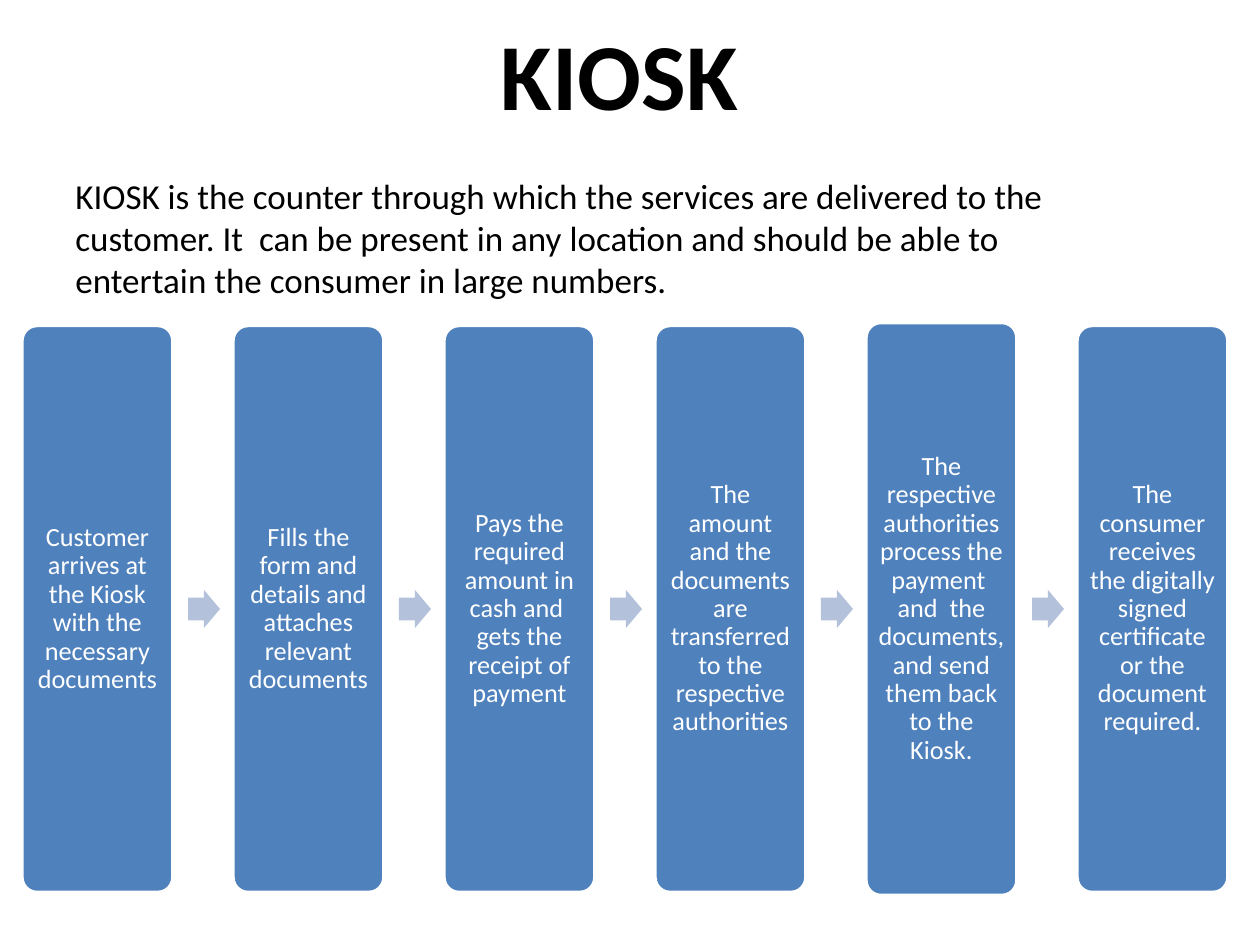
"""Build the KIOSK slide: a title, an introduction and a six-step process."""
from pptx import Presentation
from pptx.dml.color import RGBColor
from pptx.enum.shapes import MSO_SHAPE as SHAPE
from pptx.enum.text import MSO_ANCHOR as ANCHOR, MSO_AUTO_SIZE as AUTO, PP_ALIGN as ALIGN
from pptx.util import Pt

TITLE = "KIOSK"
INTRO = ("KIOSK is the counter through which the services are delivered to the customer. "
         "It  can be present in any location and should be able to entertain the consumer "
         "in large numbers.")
STEPS = [
    "Customer arrives at the Kiosk with the necessary documents",
    "Fills the form and details and attaches relevant documents",
    "Pays the required amount in cash and  gets the receipt of payment",
    "The amount and the documents are transferred to the respective authorities",
    "The respective authorities process the payment  and  the documents, "
    "and send them back to the Kiosk.",
    "The consumer receives the digitally signed certificate or the document required.",
]
TALL_STEP = 4

BLACK = RGBColor(0x00, 0x00, 0x00)
WHITE = RGBColor(0xFF, 0xFF, 0xFF)
BLUE = RGBColor(0x4F, 0x81, 0xBD)
PALE_BLUE = RGBColor(0xB3, 0xC1, 0xDB)
FONT = "Calibri"

SCALE = 914400 / 126
LEFT, PITCH, MIDDLE = 22, 211, 609
BOX_W, BOX_H, TALL_H = 151, 567, 573
ARROW_DX, ARROW_W, ARROW_H = 166, 32, 38
MARGIN = 7


def px(n):
    return round(n * SCALE)


def box(x, y, w, h):
    return px(x), px(y), px(w), px(h)


def write(tf, text, size, color, align, anchor, bold=False):
    tf.text = text
    tf.word_wrap = True
    tf.auto_size = AUTO.NONE
    tf.vertical_anchor = anchor
    p = tf.paragraphs[0]
    p.alignment = align
    font = p.runs[0].font
    font.name, font.size, font.bold = FONT, Pt(size), bold
    font.color.rgb = color
    return p


def add_shape(s, kind, x, w, h, fill, adjustments):
    sp = s.shapes.add_shape(kind, *box(x, MIDDLE - h / 2, w, h))
    sp.shadow.inherit = False
    sp.fill.solid()
    sp.fill.fore_color.rgb = fill
    sp.line.fill.background()
    for i, value in enumerate(adjustments):
        sp.adjustments[i] = value
    return sp


def add_step(s, i, text):
    h = TALL_H if i == TALL_STEP else BOX_H
    sp = add_shape(s, SHAPE.ROUNDED_RECTANGLE, LEFT + i * PITCH, BOX_W, h, BLUE, [0.1])
    sp.line.color.rgb = WHITE
    sp.line.width = Pt(2)
    tf = sp.text_frame
    tf.margin_left = tf.margin_right = tf.margin_top = tf.margin_bottom = px(MARGIN)
    p = write(tf, text, 15, WHITE, ALIGN.CENTER, ANCHOR.MIDDLE)
    p.line_spacing = 0.9


def main():
    prs = Presentation()
    prs.slide_width, prs.slide_height = px(1260), px(945)
    s = prs.slides.add_slide(prs.slide_layouts[5])

    title = s.shapes.title
    title.left, title.top, title.width, title.height = box(63, 38, 1113, 98)
    write(title.text_frame, TITLE, 54, BLACK, ALIGN.CENTER, ANCHOR.BOTTOM, bold=True)

    for i, text in enumerate(STEPS):
        add_step(s, i, text)
        if i < len(STEPS) - 1:
            add_shape(s, SHAPE.RIGHT_ARROW, LEFT + i * PITCH + ARROW_DX,
                      ARROW_W, ARROW_H, PALE_BLUE, [0.6, 0.5])

    intro = s.shapes.add_textbox(*box(63, 168, 1071, 84))
    write(intro.text_frame, INTRO, 20, BLACK, ALIGN.LEFT, ANCHOR.TOP)
    prs.save("out.pptx")


if __name__ == "__main__":
    main()
